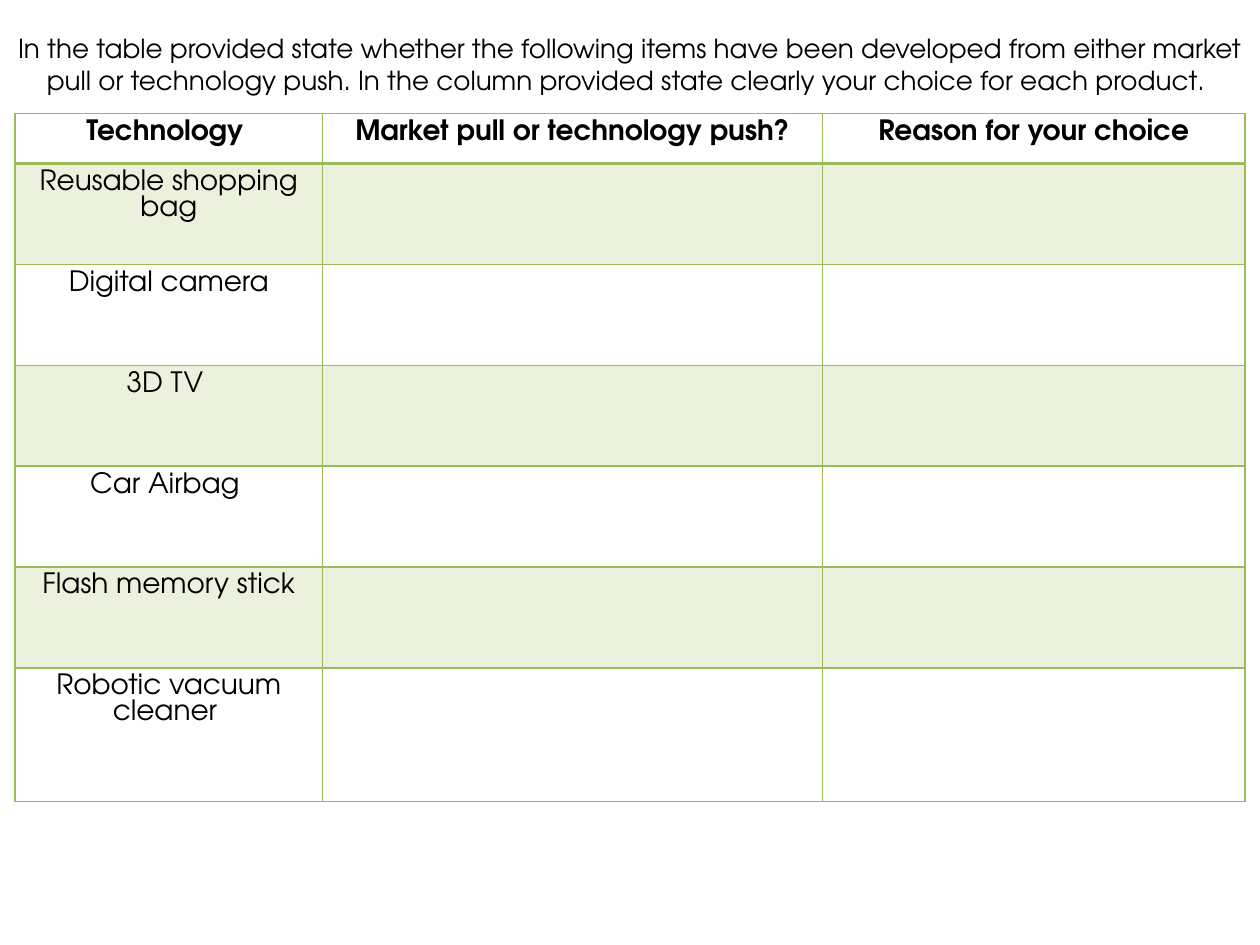
"""Build a worksheet slide asking pupils to sort products into market pull or technology push."""
from lxml import etree
from pptx import Presentation
from pptx.dml.color import RGBColor
from pptx.enum.text import MSO_AUTO_SIZE, PP_ALIGN
from pptx.oxml.ns import qn
from pptx.util import Inches, Pt

FONT = "TeX Gyre Adventor"
GREEN = "9BBB59"
HEADINGS = ["Technology ", "Market pull or technology push?", "Reason for your choice"]
PRODUCTS = ["Reusable shopping bag", "Digital camera", "3D TV ", "Car Airbag ",
            "Flash memory stick", "Robotic vacuum cleaner "]
COLUMN_WIDTHS = [2.44, 3.97, 3.35]
ROW_HEIGHTS = [0.4] + [0.8] * 5 + [1.06]


def format_paragraph(paragraph, size, bold=False):
    paragraph.alignment = PP_ALIGN.CENTER
    paragraph.font.name = FONT
    paragraph.font.size = Pt(size)
    paragraph.font.bold = bold
    paragraph.font.color.rgb = RGBColor.from_string("000000")


def add_border(cell, side, width):
    line = etree.SubElement(cell._tc.get_or_add_tcPr(), qn(f"a:ln{side}"), w=str(Pt(width)))
    fill = etree.SubElement(line, qn("a:solidFill"))
    etree.SubElement(fill, qn("a:srgbClr"), val=GREEN)


presentation = Presentation()
presentation.slide_width = Inches(10)
presentation.slide_height = Inches(7.5)
slide = presentation.slides.add_slide(presentation.slide_layouts[6])

rows = [HEADINGS] + [[product, "", ""] for product in PRODUCTS]
table = slide.shapes.add_table(
    len(rows), len(HEADINGS), Inches(0.12), Inches(0.9),
    Inches(sum(COLUMN_WIDTHS)), Inches(sum(ROW_HEIGHTS))).table
table.first_row = False
table.horz_banding = False
for column, width in zip(table.columns, COLUMN_WIDTHS):
    column.width = Inches(width)

for row_index, (row, height) in enumerate(zip(table.rows, ROW_HEIGHTS)):
    row.height = Inches(height)
    for cell, text in zip(row.cells, rows[row_index]):
        cell.text = text
        format_paragraph(cell.text_frame.paragraphs[0], 16, bold=row_index == 0)
        for side in "LRTB":
            header_rule = (row_index, side) in [(0, "B"), (1, "T")]
            add_border(cell, side, 2 if header_rule else 1)
        if row_index % 2:
            cell.fill.solid()
            cell.fill.fore_color.rgb = RGBColor.from_string(GREEN)
            color = cell._tc.tcPr.find(qn("a:solidFill")).find(qn("a:srgbClr"))
            etree.SubElement(color, qn("a:alpha"), val="20000")
        else:
            cell.fill.background()

instructions = slide.shapes.add_textbox(Inches(0), Inches(0.21), Inches(10), Inches(0.61))
text_frame = instructions.text_frame
text_frame.word_wrap = True
text_frame.auto_size = MSO_AUTO_SIZE.SHAPE_TO_FIT_TEXT
text_frame.text = (
    "In the table provided state whether the following items have been developed from either "
    "market pull or technology push. In the column provided state clearly your choice for each "
    "product. ")
format_paragraph(text_frame.paragraphs[0], 15)

presentation.save("out.pptx")
